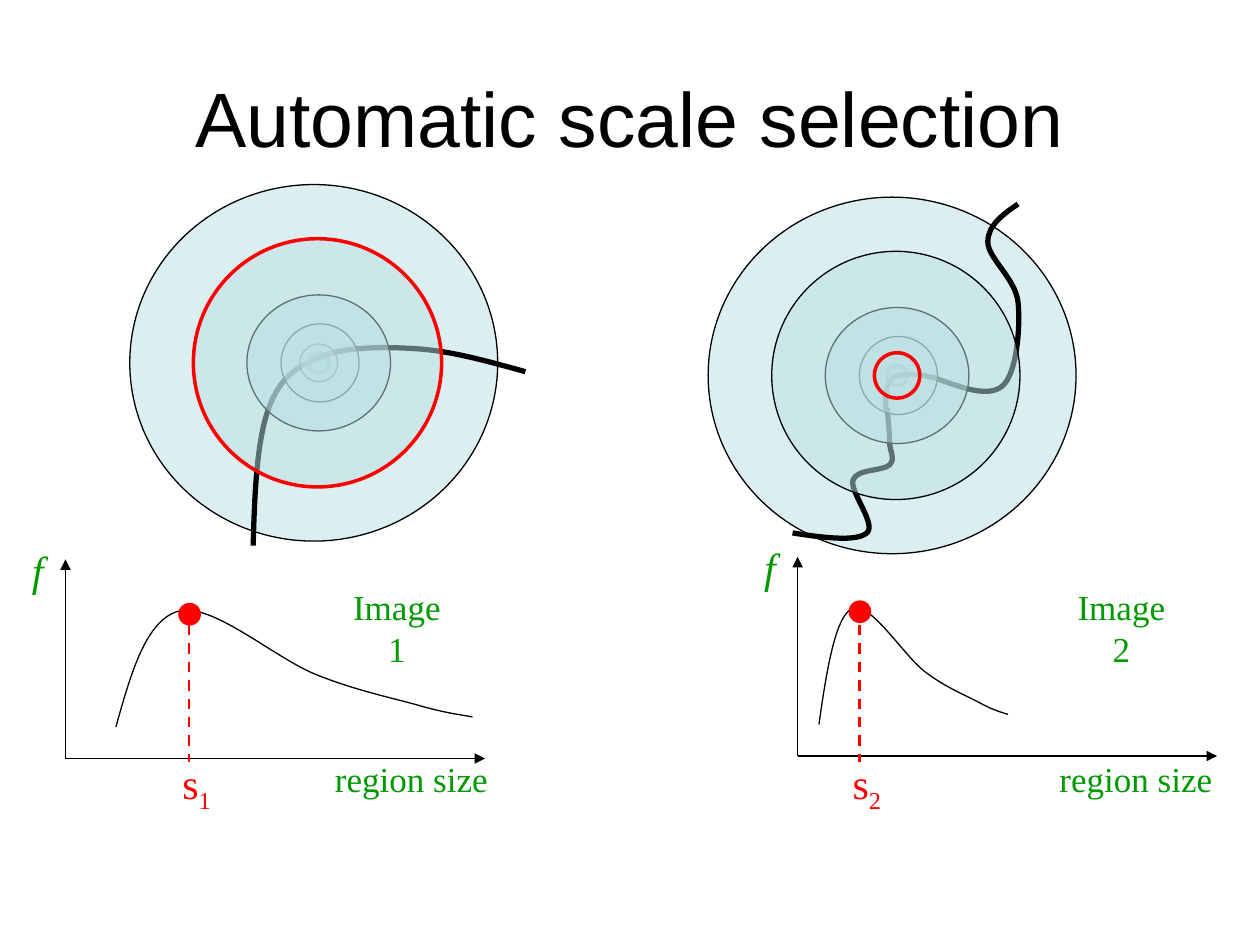
"""Build a slide that explains automatic scale selection on two images."""
from lxml import etree
from pptx import Presentation
from pptx.dml.color import RGBColor
from pptx.enum.dml import MSO_LINE
from pptx.enum.shapes import MSO_CONNECTOR, MSO_SHAPE
from pptx.enum.text import MSO_ANCHOR, MSO_AUTO_SIZE, PP_ALIGN
from pptx.oxml.ns import qn
from pptx.util import Inches, Pt

OVAL = MSO_SHAPE.OVAL
STRAIGHT = MSO_CONNECTOR.STRAIGHT
DASH = MSO_LINE.DASH
CENTER = PP_ALIGN.CENTER
MIDDLE = MSO_ANCHOR.MIDDLE
GROW = MSO_AUTO_SIZE.SHAPE_TO_FIT_TEXT
BLACK, RED, GREEN, PALE = "000000", "FF0000", "009900", "BBE0E3"


def paint(shape, line, width, fill=None, alpha=100, dash=None, arrow=False):
    properties = shape.element.spPr
    if fill:
        shape.fill.solid()
        shape.fill.fore_color.rgb = RGBColor.from_string(fill)
        color = properties.find(f"{qn('a:solidFill')}/{qn('a:srgbClr')}")
        etree.SubElement(color, qn("a:alpha"), val=str(alpha * 1000))
    elif hasattr(shape, "fill"):
        shape.fill.background()
    shape.line.color.rgb = RGBColor.from_string(line)
    shape.line.width = Pt(width)
    if dash:
        shape.line.dash_style = dash
    if arrow:
        etree.SubElement(properties.find(qn("a:ln")), qn("a:tailEnd"), type="triangle")
    etree.SubElement(properties, qn("a:effectLst"))


def write(box, text, size, color, font="Times New Roman", italic=None, subscript="", wrap=False):
    box.text_frame.word_wrap = wrap
    paragraph = box.text_frame.paragraphs[0]
    paragraph.alignment = CENTER
    for part in filter(None, (text, subscript)):
        run = paragraph.add_run()
        run.text = part
        run.font.size = Pt(size)
        run.font.name = font
        run.font.italic = italic
        run.font.color.rgb = RGBColor.from_string(color)
    if subscript:
        run.font._element.set("baseline", "-25000")


prs = Presentation()
prs.slide_width, prs.slide_height = Inches(10), Inches(7.5)
CELL = prs.slide_width // 10
slide = prs.slides.add_slide(prs.slide_layouts[5])

title = slide.shapes.title
title.left, title.top, title.width, title.height = (round(n * CELL) for n in (0.5, 0.3, 9, 1.25))
write(title, "Automatic scale selection", 44, BLACK, font="Arial", wrap=True)
title.text_frame.vertical_anchor = MIDDLE

dot, outer = (2.53, 0.16, 0.16, BLACK, 2), (2.49, 2.92, 2.83, BLACK, 0.75)
middle = [(2.54, 0.62, 0.62, BLACK, 0.75), (2.53, 1.14, 1.08, BLACK, 0.75)]
rings = [
    [(2.53, 0.3, 0.3, BLACK, 0.75), *middle, (2.52, 1.97, 1.97, RED, 2)],
    [*middle, (2.52, 1.97, 1.97, BLACK, 0.75), (2.53, 0.36, 0.36, RED, 2)],
]
edges = [
    [[(2.01, 4.33), (2.13, 3.25), (2.55, 2.83), (3.33, 2.77), (4.17, 2.95)]],
    [
        [(7.42, 3), (7.96, 3.06), (8.08, 2.4), (7.84, 1.92), (8.08, 1.62)],
        [(6.29, 4.23), (6.88, 4.23), (6.77, 3.81), (7.06, 3.69), (7.06, 3.51), (7.04, 3.24)],
        [(7.03, 3.25), (7.05, 3.05), (7.13, 2.98), (7.27, 2.97), (7.42, 3)],
    ],
]
response = [(0, 0.25), (0.5, 1.17), (1.58, 0.67), (2.41, 0.42), (2.83, 0.33)]
origins = [(0.52, 6.02), (6.33, 6)]
response_starts, stretches = (0.92, 6.5), (1, 0.53)
peaks, label_lefts = (1.5, 6.82), (2.56, 8.31)

for panel, (x, y) in enumerate(origins):
    plot = slide.shapes.add_group_shape().shapes
    peak, label_left = peaks[panel], label_lefts[panel]
    start, stretch = response_starts[panel], stretches[panel]
    shift_x, center_y = 4.59 * panel, 2.88 + 0.1 * panel
    scores = [(start + stretch * across, y - up) for across, up in response]
    back = [("region", region) for region in (dot, outer)]
    traces = [("curve", (slide.shapes, knots, 3)) for knots in edges[panel]]
    front = [("region", region) for region in rings[panel]]

    for kind, item in [*back, *traces, *front, ("curve", (plot, scores, 0.75))]:
        if kind == "region":
            center_x, width, height, line, weight = item
            place = (center_x + shift_x - width / 2, center_y - height / 2, width, height)
            region = slide.shapes.add_shape(OVAL, *(round(n * CELL) for n in place))
            paint(region, line, weight, fill=PALE, alpha=50)
            continue
        holder, knots, weight = item
        handles = []
        for before, knot, after in zip(knots, knots[1:], knots[2:]):
            slope = [(b - a) / 6 for a, b in zip(before, after)]
            handles += [[k - s for k, s in zip(knot, slope)], knot, [k + s for k, s in zip(knot, slope)]]
        first = [(a + b) / 2 for a, b in zip(knots[0], handles[0])]
        last = [(a + b) / 2 for a, b in zip(knots[-1], handles[-1])]
        points = [knots[0], first, *handles, last, knots[-1]]
        begin, *rest = [(round(across * 100), round(down * 100)) for across, down in points]
        builder = holder.build_freeform(*begin, scale=CELL / 100)
        builder.add_line_segments(rest, close=False)
        curve = builder.convert_to_shape()
        segments = list(curve.element.iter(qn("a:lnTo")))
        for triple in zip(segments[::3], segments[1::3], segments[2::3]):
            bend = etree.Element(qn("a:cubicBezTo"))
            triple[0].addprevious(bend)
            for segment in triple:
                bend.append(segment[0])
                segment.getparent().remove(segment)
        paint(curve, BLACK, weight)

    for end in ((x + 3.33, y), (x, y - 1.58)):
        axis = plot.add_connector(STRAIGHT, *(round(n * CELL) for n in (x, y, *end)))
        paint(axis, BLACK, 0.75, arrow=True)

    best = slide.shapes.add_group_shape().shapes
    marker_place = (peak - 0.08, y - 1.23, 0.17, 0.17)
    marker = best.add_shape(OVAL, *(round(n * CELL) for n in marker_place))
    paint(marker, RED, 0.75, fill=RED)
    drop = best.add_connector(STRAIGHT, *(round(n * CELL) for n in (peak, 4.96, peak, 6.05)))
    paint(drop, RED, 1.5, dash=DASH)

    number = str(panel + 1)
    labels = [
        (plot, (x - 0.44, y - 1.75, 0.44, 0.5), "f", 24, GREEN, {"italic": True, "wrap": True}),
        (plot, (label_left, 5.96, 1.41, 0.43), "region size", 20, GREEN, {}),
        (plot, (label_left + 0.04, 4.6, 1.1, 0.43), f"Image {number}", 20, GREEN, {}),
        (best, (peak - 0.16, 5.96, 0.44, 0.5), "s", 24, RED, {"subscript": number}),
    ]
    for holder, place, text, size, color, style in labels:
        label = holder.add_textbox(*(round(n * CELL) for n in place))
        write(label, text, size, color, **style)
        label.text_frame.auto_size = GROW

prs.save("out.pptx")
